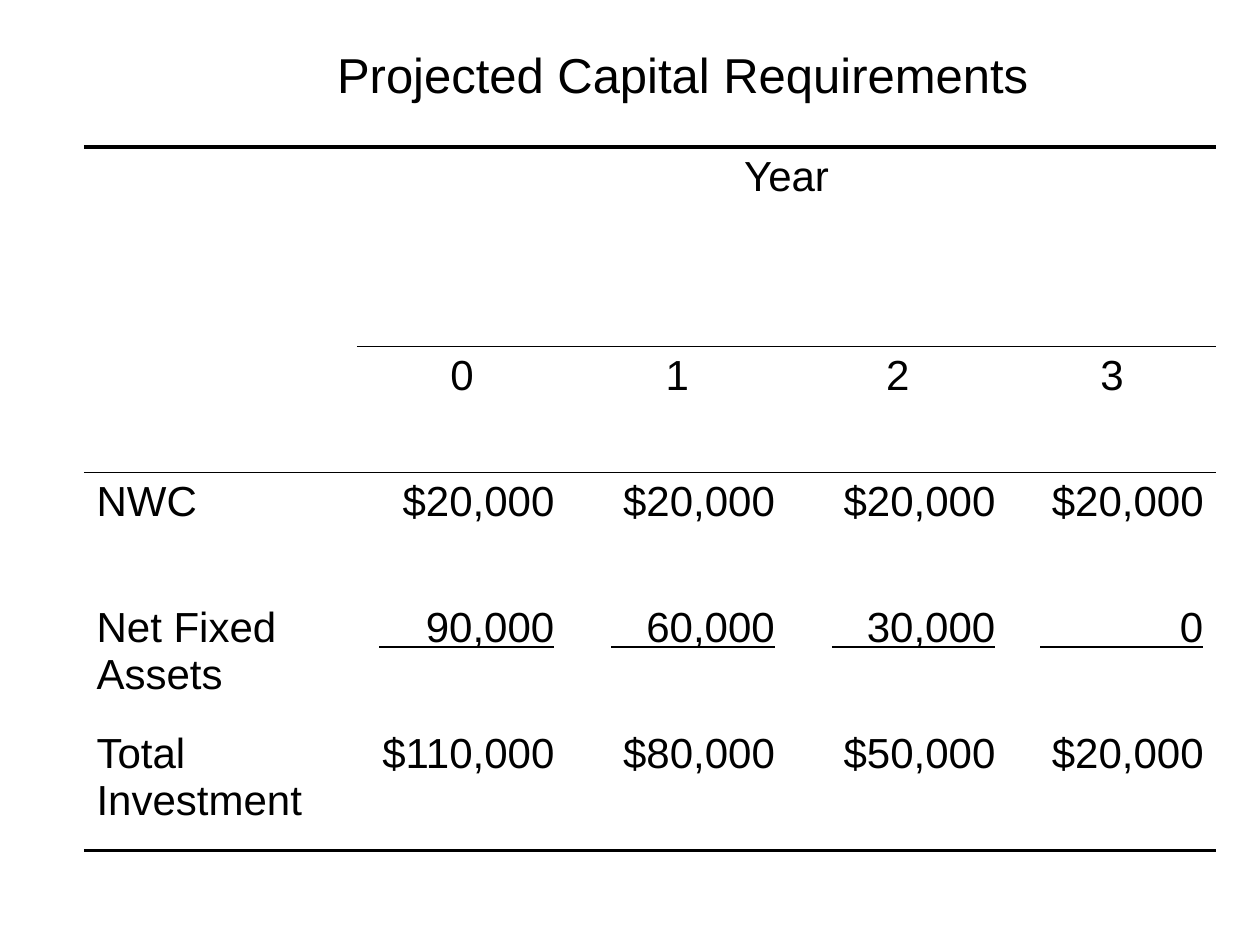
"""Build the slide of projected capital requirements by year."""
from lxml.etree import SubElement as Sub
from pptx import Presentation
from pptx.dml.color import RGBColor as Rgb
from pptx.enum.text import MSO_ANCHOR as Anchor, PP_ALIGN as Align
from pptx.oxml.ns import qn
from pptx.util import Pt

TITLE = "Projected Capital Requirements"
ROWS = [
    ["", "Year", "", "", ""],
    ["", "0", "1", "2", "3"],
    ["NWC", "$20,000", "$20,000", "$20,000", "$20,000"],
    ["Net Fixed Assets", "90,000", "60,000", "30,000", "0"],
    ["Total Investment", "$110,000", "$80,000", "$50,000", "$20,000"],
]
SUM_ROW = 3
RULE_PAD = [0, 4, 3, 3, 12]
WIDTHS = [156, 120, 126, 126, 119]
HEIGHTS = [114] + [72] * 4
TITLE_BOX = (54, 12, 672, 60)
TABLE_AT = (48, 84)
THEME = {"font": "Arial", "ink": "000000", "title": 28, "body": 24,
         "thin": 1, "thick": 2.25}


def write(frame, text, size, align, under=False):
    para = frame.paragraphs[0]
    para.alignment = align
    if not text:
        return
    run = para.add_run()
    run.text = text
    look = {"name": THEME["font"], "size": Pt(size), "bold": False,
            "underline": under}
    for key, value in look.items():
        setattr(run.font, key, value)
    run.font.color.rgb = Rgb.from_string(THEME["ink"])


def rule(level, col):
    """Return the line weight above row number level, or None."""
    if level in (0, len(ROWS)):
        return THEME["thick"]
    if level == 2 or (level == 1 and col > 0):
        return THEME["thin"]
    return None


def border(cell, row, col):
    props = cell._tc.get_or_add_tcPr()
    sides = {"L": None, "R": None, "T": rule(row, col), "B": rule(row + 1, col)}
    for side, weight in sides.items():
        line = Sub(props, qn(f"a:ln{side}"))
        if weight:
            line.set("w", str(Pt(weight)))
            fill = Sub(line, qn("a:solidFill"))
            Sub(fill, qn("a:srgbClr")).set("val", THEME["ink"])
        else:
            Sub(line, qn("a:noFill"))


def add_title(slide):
    frame = slide.shapes.add_textbox(*map(Pt, TITLE_BOX)).text_frame
    frame.word_wrap = True
    frame.vertical_anchor = Anchor.MIDDLE
    write(frame, TITLE, THEME["title"], Align.CENTER)


def add_grid(slide):
    place = (*TABLE_AT, sum(WIDTHS), sum(HEIGHTS))
    grid = slide.shapes.add_table(
        len(ROWS), len(WIDTHS), *map(Pt, place)).table
    for key in ("first_row", "horz_banding"):
        setattr(grid, key, False)
    for col, width in zip(grid.columns, WIDTHS):
        col.width = Pt(width)
    for row, height in zip(grid.rows, HEIGHTS):
        row.height = Pt(height)
    for r, row in enumerate(ROWS):
        for c, text in enumerate(row):
            cell = grid.cell(r, c)
            border(cell, r, c)
            cell.fill.background()
            align = (Align.LEFT if c == 0 else
                     Align.CENTER if r < 2 else Align.RIGHT)
            under = r == SUM_ROW and c > 0
            if under:
                text = text.rjust(len(text) + RULE_PAD[c])
            write(cell.text_frame, text, THEME["body"], align, under)
    grid.cell(0, 1).merge(grid.cell(0, len(WIDTHS) - 1))


def main():
    deck = Presentation()
    deck.slide_width, deck.slide_height = Pt(720), Pt(540)
    slide = deck.slides.add_slide(deck.slide_layouts[6])
    add_title(slide)
    add_grid(slide)
    deck.save("out.pptx")


if __name__ == "__main__":
    main()
